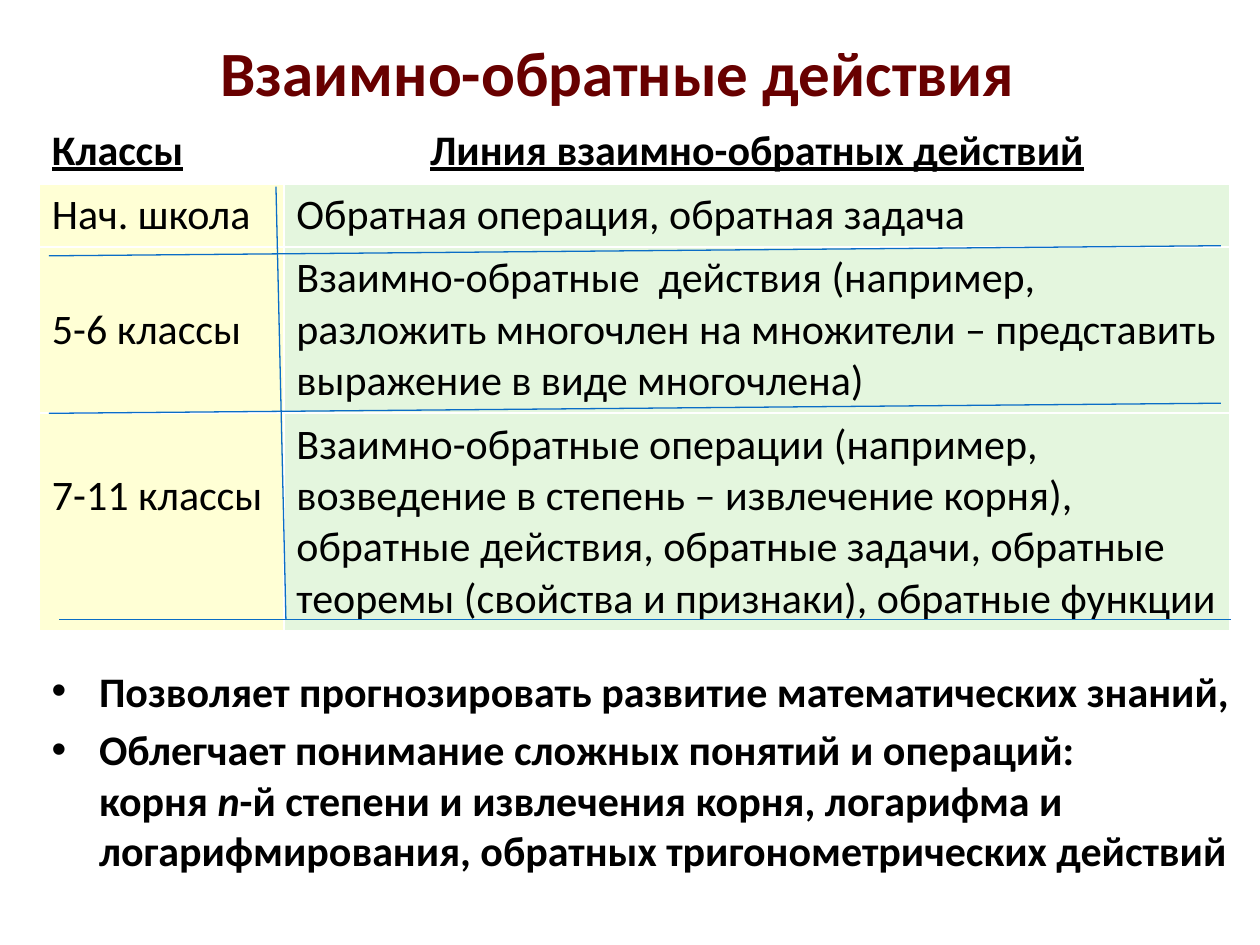
from pptx import Presentation
from pptx.dml.color import RGBColor
from pptx.enum.shapes import MSO_CONNECTOR
from pptx.enum.text import MSO_ANCHOR, PP_ALIGN
from pptx.oxml import parse_xml
from pptx.oxml.ns import nsdecls
from pptx.util import Pt

TITLE = "Взаимно-обратные действия"
ROWS = [
    ("Классы", "Линия взаимно-обратных действий"),
    ("Нач. школа", "Обратная операция, обратная задача"),
    ("5-6 классы", "Взаимно-обратные  действия (например, разложить многочлен "
     "на множители – представить выражение в виде многочлена)"),
    ("7-11 классы", "Взаимно-обратные операции (например, возведение в степень – "
     "извлечение корня), обратные действия, обратные задачи, обратные теоремы "
     "(свойства и признаки), обратные функции"),
]
BULLETS = [
    [("Позволяет прогнозировать развитие математических знаний,", False)],
    [("Облегчает понимание сложных понятий и операций:\vкорня ", False),
     ("n", True),
     ("-й степени и извлечения корня, логарифма и логарифмирования, "
      "обратных тригонометрических действий", False)],
]
THEME = {
    "font": "Calibri", "title_size": 36, "body_size": 24,
    "title": "680000", "text": "000000", "line": "0A6DC6",
    "border": "FFFFFF", "columns": ("FFFFD5", "E4F6DE"),
}
COL_WIDTHS = (139.7, 540.7)
ROW_HEIGHTS = (36.5, 36.5, 95.1, 124)
LINE_HEIGHT = 29.3
CELL_MARGIN = 3.6
RULES = [
    ((28, 146.2), (697.7, 140.4)),
    ((28, 236.2), (697.7, 230.4)),
    ((33.8, 354.2), (703.4, 354.2)),
    ((157.7, 106.6), (163.4, 354.2)),
]


def write(p, text, size=THEME["body_size"], color=THEME["text"],
          bold=False, italic=False, underline=False):
    for i, part in enumerate(text.split("\v")):
        if i:
            p.add_line_break()
        r = p.add_run()
        r.text = part
        f = r.font
        f.name, f.size = THEME["font"], Pt(size)
        f.color.rgb = RGBColor.from_string(color)
        f.bold, f.italic, f.underline = bold, italic, underline


def add_borders(cell, bottom):
    pr = cell._tc.get_or_add_tcPr()
    widths = {"lnL": 1, "lnR": 1, "lnT": 1, "lnB": bottom}
    for i, (tag, width) in enumerate(widths.items()):
        pr.insert(i, parse_xml(
            f'<a:{tag} {nsdecls("a")} w="{Pt(width)}"><a:solidFill>'
            f'<a:srgbClr val="{THEME["border"]}"/></a:solidFill></a:{tag}>'))


def add_title(slide):
    sp = slide.shapes.title
    sp.left, sp.top, sp.width, sp.height = Pt(29), Pt(21), Pt(648), Pt(40)
    tf = sp.text_frame
    tf.vertical_anchor = MSO_ANCHOR.MIDDLE
    p = tf.paragraphs[0]
    p.alignment = PP_ALIGN.CENTER
    write(p, TITLE, size=THEME["title_size"], color=THEME["title"], bold=True)


def add_classes_table(slide):
    table = slide.shapes.add_table(
        len(ROWS), len(COL_WIDTHS), Pt(22.5), Pt(68),
        Pt(sum(COL_WIDTHS)), Pt(sum(ROW_HEIGHTS))).table
    for col, width in zip(table.columns, COL_WIDTHS):
        col.width = Pt(width)
    for i, (row, height) in enumerate(zip(ROWS, ROW_HEIGHTS)):
        table.rows[i].height = Pt(height)
        header = i == 0
        for j, text in enumerate(row):
            cell = table.cell(i, j)
            second_line = j == 0 and i > 1
            cell.margin_top = Pt(CELL_MARGIN + LINE_HEIGHT * second_line)
            cell.margin_bottom = Pt(CELL_MARGIN)
            if header:
                cell.fill.background()
            else:
                cell.fill.solid()
                cell.fill.fore_color.rgb = RGBColor.from_string(THEME["columns"][j])
            add_borders(cell, bottom=3 if header else 1)
            p = cell.text_frame.paragraphs[0]
            p.alignment = PP_ALIGN.CENTER if header and j else PP_ALIGN.LEFT
            write(p, text, bold=header, underline=header)


def add_bullets(slide):
    tf = slide.shapes.add_textbox(Pt(22.5), Pt(376.5), Pt(697.5), Pt(140.5)).text_frame
    tf.word_wrap = True
    for i, parts in enumerate(BULLETS):
        p = tf.add_paragraph() if i else tf.paragraphs[0]
        p.space_before = Pt(THEME["body_size"] * 0.2)
        pr = p._p.get_or_add_pPr()
        pr.set("marL", str(Pt(27)))
        pr.set("indent", str(Pt(-27)))
        pr.append(parse_xml(f'<a:buFont {nsdecls("a")} typeface="Arial"/>'))
        pr.append(parse_xml(f'<a:buChar {nsdecls("a")} char="•"/>'))
        for text, italic in parts:
            write(p, text, bold=True, italic=italic)


def add_rule(slide, start, end):
    line = slide.shapes.add_connector(
        MSO_CONNECTOR.STRAIGHT, *(Pt(v) for v in start + end))
    line.line.color.rgb = RGBColor.from_string(THEME["line"])
    line.line.width = Pt(0.75)
    line._element.spPr.append(parse_xml(f'<a:effectLst {nsdecls("a")}/>'))


def main():
    prs = Presentation()
    prs.slide_width, prs.slide_height = Pt(720), Pt(540)
    slide = prs.slides.add_slide(prs.slide_layouts[5])
    add_title(slide)
    add_classes_table(slide)
    add_bullets(slide)
    for start, end in RULES:
        add_rule(slide, start, end)
    prs.save("out.pptx")


if __name__ == "__main__":
    main()
